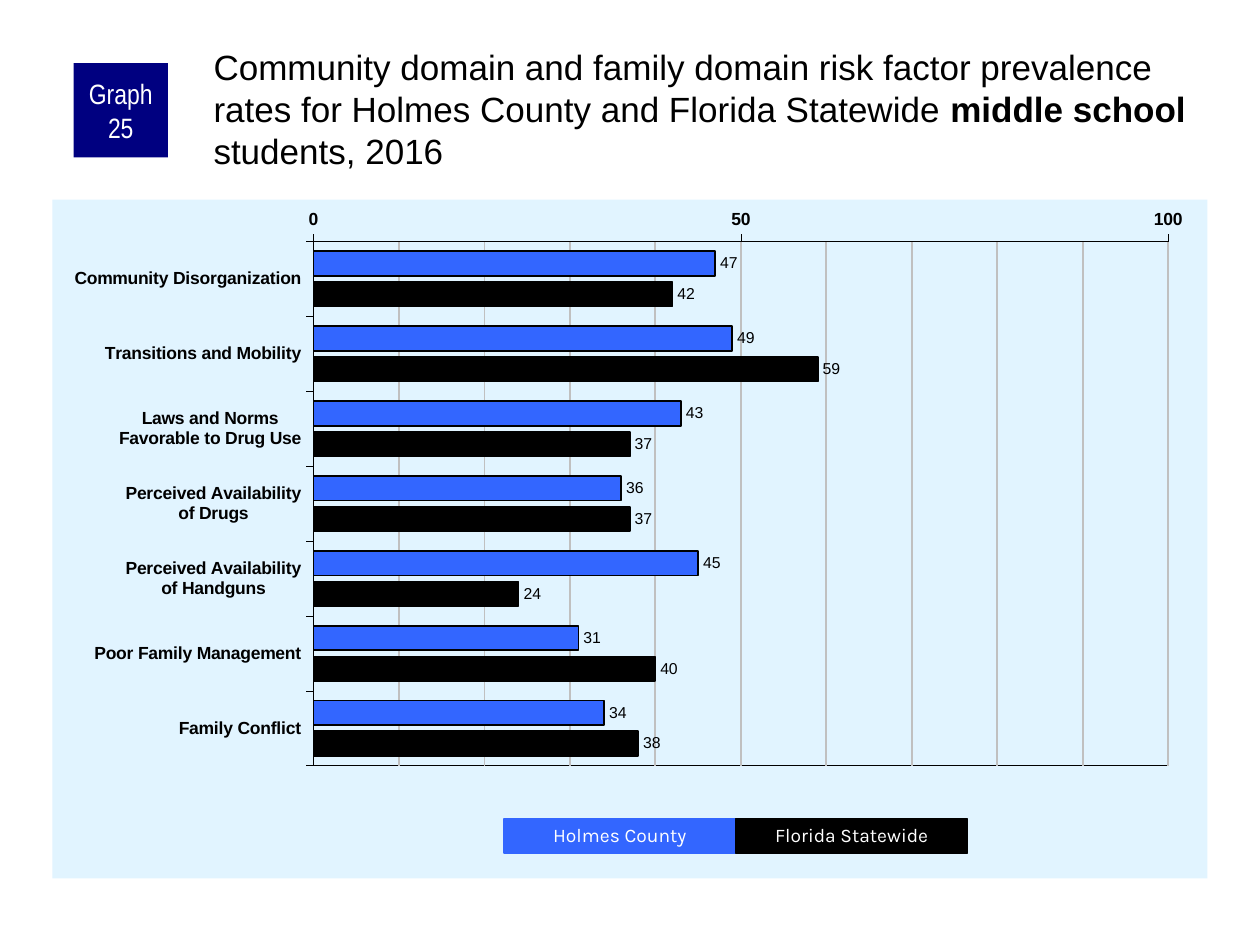
from copy import deepcopy

from pptx import Presentation
from pptx.chart.data import CategoryChartData
from pptx.dml.color import RGBColor
from pptx.enum.chart import (XL_AXIS_CROSSES, XL_CHART_TYPE, XL_LABEL_POSITION,
                             XL_TICK_MARK)
from pptx.enum.shapes import MSO_SHAPE
from pptx.enum.text import MSO_ANCHOR, MSO_AUTO_SIZE, PP_ALIGN
from pptx.oxml import parse_xml
from pptx.oxml.ns import nsdecls, qn
from pptx.util import Pt

BARS = XL_CHART_TYPE.BAR_CLUSTERED
AT_MAXIMUM = XL_AXIS_CROSSES.MAXIMUM
TICK_OUT, TICK_NONE = XL_TICK_MARK.OUTSIDE, XL_TICK_MARK.NONE
OUTSIDE_END = XL_LABEL_POSITION.OUTSIDE_END
RECTANGLE = MSO_SHAPE.RECTANGLE
TOP, MIDDLE = MSO_ANCHOR.TOP, MSO_ANCHOR.MIDDLE
LEFT, CENTER = PP_ALIGN.LEFT, PP_ALIGN.CENTER
NO_FIT, GROW = MSO_AUTO_SIZE.NONE, MSO_AUTO_SIZE.SHAPE_TO_FIT_TEXT

COLORS = {"black": "000000", "white": "FFFFFF", "navy": "000080",
          "blue": "3366FF", "pale": "E1F4FF", "grid": "C0C0C0"}

TITLE = [
    ("Community domain and family domain risk factor prevalence rates for "
     "Holmes County and Florida Statewide ", False),
    ("middle school", True),
    (" students, 2016", False),
]
CATEGORIES = [
    "Community Disorganization",
    "Transitions and Mobility",
    "Laws and Norms\nFavorable to Drug Use",
    "Perceived Availability\nof Drugs",
    "Perceived Availability\nof Handguns",
    "Poor Family Management",
    "Family Conflict",
]
SERIES = [
    ("Holmes County", "blue", (47, 49, 43, 36, 45, 31, 34)),
    ("Florida Statewide", "black", (42, 59, 37, 37, 24, 40, 38)),
]
PLOT_LAYOUT = {"x": 0.226, "y": 0.062, "w": 0.74, "h": 0.772}


def rgb(name):
    return RGBColor.from_string(COLORS[name])


def style_font(font, size, color="black", name="Arial", bold=False):
    font.name, font.size, font.bold = name, Pt(size), bold
    font.color.rgb = rgb(color)


def style_line(line, color, width):
    line.color.rgb = rgb(color)
    line.width = Pt(width)


def set_insets(frame, left, top, right, bottom):
    frame.margin_left, frame.margin_top = Pt(left), Pt(top)
    frame.margin_right, frame.margin_bottom = Pt(right), Pt(bottom)


def add_title(page):
    title = page.shapes.title
    title.left, title.top, title.width, title.height = Pt(120), Pt(24), Pt(570), Pt(60)
    frame = title.text_frame
    frame.auto_size, frame.word_wrap = NO_FIT, True
    frame.vertical_anchor = TOP
    set_insets(frame, 2, 2, 0, 0)
    para = frame.paragraphs[0]
    para.alignment, para.line_spacing = LEFT, Pt(24)
    for text, bold in TITLE:
        span = para.add_run()
        span.text = text
        style_font(span.font, 20, bold=bold)


def add_label_box(page, text, bounds, fill, size, font):
    box = page.shapes.add_shape(RECTANGLE, *map(Pt, bounds))
    box.shadow.inherit = False
    box.fill.solid()
    box.fill.fore_color.rgb = rgb(fill)
    box.line.fill.background()
    frame = box.text_frame
    frame.word_wrap, frame.vertical_anchor = True, MIDDLE
    para = frame.paragraphs[0]
    para.alignment = CENTER
    span = para.add_run()
    span.text = text
    style_font(span.font, size, "white", font)
    return box


def add_badge(page):
    box = add_label_box(page, "Graph 25", (42, 36, 54, 54), "navy", 16, "Arial Narrow")
    set_insets(box.text_frame, 3.6, 0, 3.6, 0)


def add_legend(page):
    left, width = 288, 132.5
    for index, (name, color, _) in enumerate(SERIES):
        bounds = (left + index * width, 468, width, 19.5)
        box = add_label_box(page, name, bounds, color, 11, "Karla")
        style_line(box.line, color, 0.75)
        box.text_frame.auto_size = GROW
        box.text_frame.paragraphs[0].line_spacing = 0.9


def style_axis(axis):
    axis.major_tick_mark, axis.minor_tick_mark = TICK_OUT, TICK_NONE
    style_font(axis.tick_labels.font, 10, bold=True)
    style_line(axis.format.line, "black", 0.25)


def style_gridlines(chart):
    """Give the minor gridlines the same line as the major ones."""
    style_line(chart.value_axis.major_gridlines.format.line, "grid", 1)
    major, minor = (next(chart.element.iter(qn(f"c:{kind}Gridlines")))
                    for kind in ("major", "minor"))
    minor.append(deepcopy(major.find(qn("c:spPr"))))


def style_areas(chart):
    """Place the plot area, outline it, and fill the area around it."""
    root = chart.element.find(qn("c:chart"))
    plot_area = root.find(qn("c:plotArea"))
    for old in plot_area.findall(qn("c:layout")):
        plot_area.remove(old)
    modes = "".join(f'<c:{side}Mode val="edge"/>' for side in "xy")
    sizes = "".join(f'<c:{key} val="{value}"/>' for key, value in PLOT_LAYOUT.items())
    plot_area.insert(0, parse_xml(
        f'<c:layout {nsdecls("c")}><c:manualLayout><c:layoutTarget val="inner"/>'
        f'{modes}{sizes}</c:manualLayout></c:layout>'))

    def area_format(fill, line):
        return parse_xml(f'<c:spPr {nsdecls("c", "a")}>{fill}'
                         f'<a:ln w="{Pt(0.5)}">{line}</a:ln></c:spPr>')

    def solid(name):
        return f'<a:solidFill><a:srgbClr val="{COLORS[name]}"/></a:solidFill>'

    plot_area.append(area_format("<a:noFill/>", solid("black")))
    root.addnext(area_format(solid("pale"), "<a:noFill/>"))


def add_risk_chart(page):
    data = CategoryChartData()
    data.categories = CATEGORIES
    for name, _, values in SERIES:
        data.add_series(name, values)
    bounds = map(Pt, (30, 114, 660, 388))
    chart = page.shapes.add_chart(BARS, *bounds, data).chart
    chart.has_legend = chart.has_title = False
    style_font(chart.font, 11.8)

    names, rates = chart.category_axis, chart.value_axis
    for axis in (names, rates):
        style_axis(axis)
    names.reverse_order = True
    names.crosses = AT_MAXIMUM
    rates.minimum_scale, rates.maximum_scale = 0, 100
    rates.major_unit, rates.minor_unit = 50, 10
    rates.has_major_gridlines = rates.has_minor_gridlines = True
    style_gridlines(chart)

    plot = chart.plots[0]
    plot.gap_width, plot.overlap, plot.vary_by_categories = 80, -25, False
    for series, (_, color, _) in zip(plot.series, SERIES):
        series.format.fill.solid()
        series.format.fill.fore_color.rgb = rgb(color)
        style_line(series.format.line, "black", 1)
        labels = series.data_labels
        labels.show_value, labels.position = True, OUTSIDE_END
        style_font(labels.font, 9)
    style_areas(chart)


def main():
    deck = Presentation()
    deck.slide_width, deck.slide_height = Pt(720), Pt(540)
    page = deck.slides.add_slide(deck.slide_layouts[5])
    add_title(page)
    add_risk_chart(page)
    add_badge(page)
    add_legend(page)
    deck.save("out.pptx")


if __name__ == "__main__":
    main()
